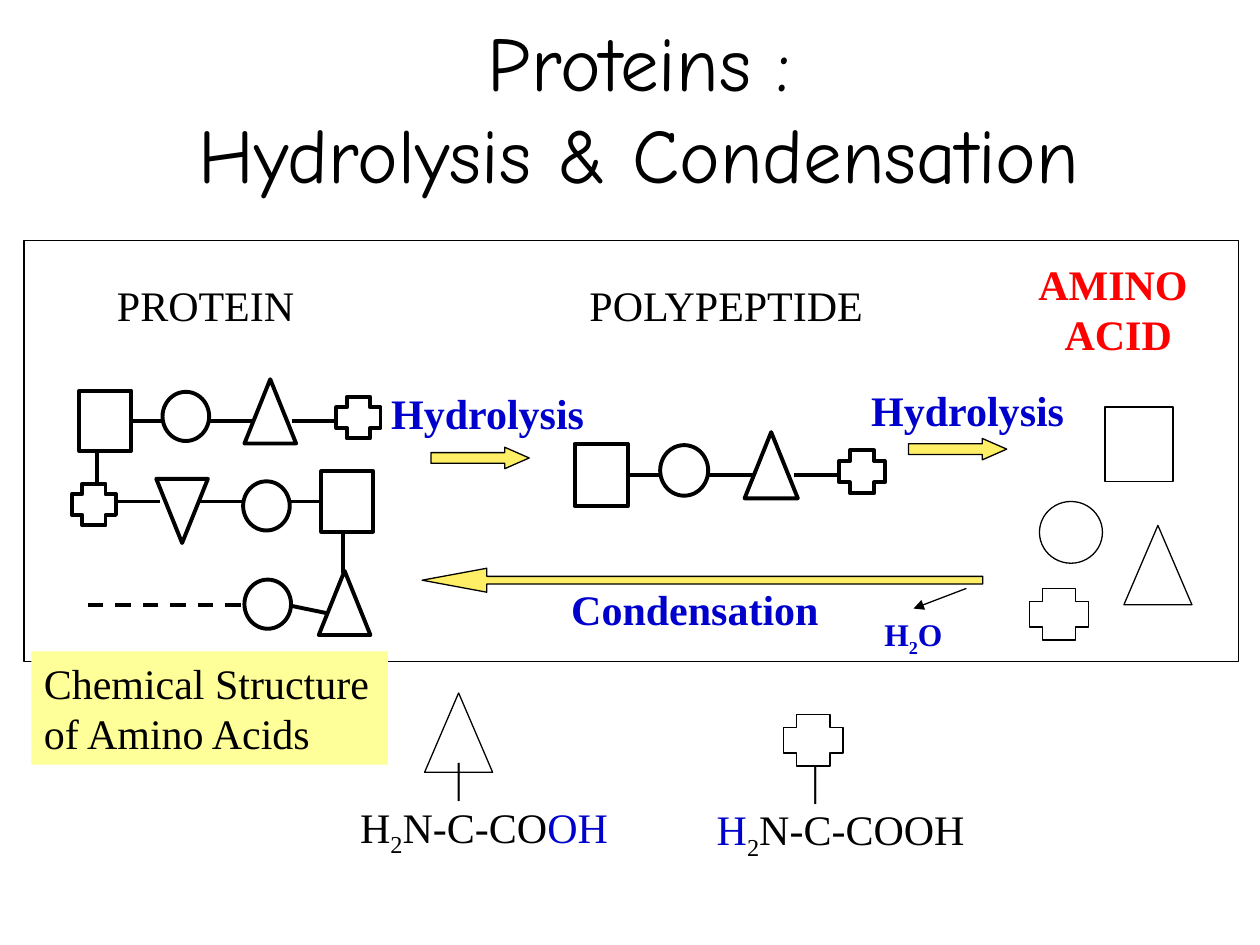
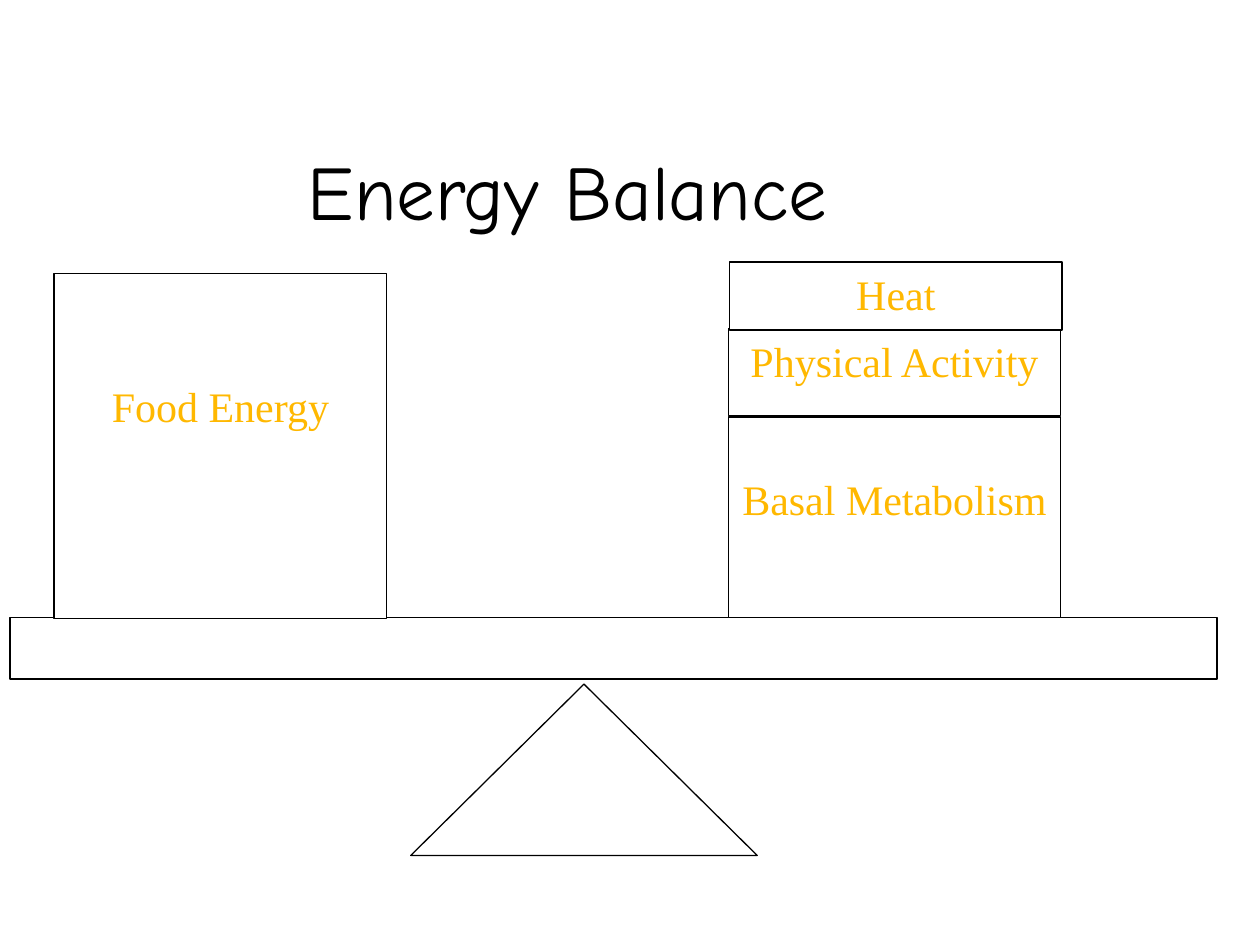
from lxml.etree import SubElement
from pptx import Presentation
from pptx.dml.color import RGBColor
from pptx.enum.dml import MSO_LINE_DASH_STYLE as Dash
from pptx.enum.shapes import MSO_CONNECTOR as Connector, MSO_SHAPE as Preset
from pptx.enum.text import MSO_ANCHOR as Anchor, MSO_AUTO_SIZE as AutoSize, PP_ALIGN as Align
from pptx.oxml.ns import qn
from pptx.util import Emu, Inches, Pt

COLUMNS, ROWS = 100, 75
TITLE_FONT, BODY_FONT = "Comic Neue", "Times New Roman"
BLACK, WHITE, BLUE, RED = "000000", "FFFFFF", "0000CC", "FF0000"
ARROW_YELLOW, LABEL_YELLOW, AMBER = "FFEF66", "FFFF99", "FFB800"
THIN, THICK = 0.75, 2.25


def color(hex_string):
    return RGBColor.from_string(hex_string)


class Deck:
    def __init__(self):
        self.presentation = Presentation()
        self.presentation.slide_width = Inches(10)
        self.presentation.slide_height = Inches(7.5)
        self.slide = None

    def x(self, columns):
        return Emu(round(self.presentation.slide_width * columns / COLUMNS))

    def y(self, rows):
        return Emu(round(self.presentation.slide_height * rows / ROWS))

    def place(self, box):
        left, top, width, height = box
        return self.x(left), self.y(top), self.x(width), self.y(height)

    def new_slide(self, title, box):
        self.slide = self.presentation.slides.add_slide(self.presentation.slide_layouts[5])
        shape = self.slide.shapes.title
        shape.left, shape.top, shape.width, shape.height = self.place(box)
        text_frame = shape.text_frame
        text_frame.text = title
        text_frame.word_wrap = True
        text_frame.auto_size = AutoSize.NONE
        text_frame.vertical_anchor = Anchor.BOTTOM
        paragraph = text_frame.paragraphs[0]
        paragraph.alignment = Align.CENTER
        for run in paragraph.runs:
            self.style(run, 44, BLACK, name=TITLE_FONT)

    def style(self, run, size, hex_string, bold=False, name=BODY_FONT):
        run.font.name, run.font.size, run.font.bold = name, Pt(size), bold
        run.font.color.rgb = color(hex_string)

    def shape(self, preset, box, fill=WHITE, weight=THIN, adjustments=(), rotation=0):
        shape = self.slide.shapes.add_shape(preset, *self.place(box))
        shape.shadow.inherit = False
        shape.rotation = rotation
        for index, value in enumerate(adjustments):
            shape.adjustments[index] = value
        if fill:
            shape.fill.solid()
            shape.fill.fore_color.rgb = color(fill)
        else:
            shape.fill.background()
        if weight:
            shape.line.color.rgb = color(BLACK)
            shape.line.width = Pt(weight)
        else:
            shape.line.fill.background()
        return shape

    def line(self, start, end, weight=THICK, dash=None, arrow=False):
        connector = self.slide.shapes.add_connector(
            Connector.STRAIGHT, self.x(start[0]), self.y(start[1]), self.x(end[0]), self.y(end[1]))
        connector.line.color.rgb = color(BLACK)
        connector.line.width = Pt(weight)
        if dash:
            connector.line.dash_style = dash
        if arrow:
            SubElement(connector.line._get_or_add_ln(), qn("a:tailEnd"), type="triangle")
        SubElement(connector._element.spPr, qn("a:effectLst"))
        return connector

    def label(self, shape, paragraphs, hex_string=BLACK, size=24, bold=False,
              align=Align.LEFT, wrap=True, space_above=0):
        text_frame = shape.text_frame
        text_frame.word_wrap = wrap
        text_frame.vertical_anchor = Anchor.TOP
        text_frame.margin_top = Inches(0.05) + self.y(space_above)
        for index, pieces in enumerate(paragraphs):
            paragraph = text_frame.add_paragraph() if index else text_frame.paragraphs[0]
            paragraph.alignment = align
            if isinstance(pieces, str):
                pieces = [(pieces, hex_string)]
            for text, piece_color in pieces:
                run = paragraph.add_run()
                run.text = text
                self.style(run, size, piece_color, bold)
                if text.isdigit():
                    run.font._element.set("baseline", "-25000")

    def text(self, box, paragraphs, **options):
        text_box = self.slide.shapes.add_textbox(*self.place(box))
        self.label(text_box, paragraphs, **options)
        return text_box

    def chain(self, left, top, scale=1.0, turned=False):
        length, height = 23.9, 5.1

        def bead(preset, column, row, width, tall, rotation=0):
            if turned:
                column, row = length - column - width, height - row - tall
            box = (left + column * scale, top + row * scale, width * scale, tall * scale)
            return self.shape(preset, box, weight=THICK, rotation=rotation)

        def point(column):
            row = height - 3.3 if turned else 3.3
            column = length - column if turned else column
            return left + column * scale, top + row * scale

        square = bead(Preset.RECTANGLE, 0, 0.9, 4.1, 4.8)
        links = [self.line(point(start), point(start + 3.7)) for start in (2.9, 10.1, 16.9)]
        links[0].begin_connect(square, 1 if turned else 3)
        bead(Preset.OVAL, 6.6, 1, 3.7, 3.9)
        bead(Preset.ISOSCELES_TRIANGLE, 13.1, 0, 4.1, 5.1, 180 if turned else 0)
        bead(Preset.CROSS, 20.4, 1.4, 3.5, 3.3)

    def formula(self, left, top, pieces):
        box = self.text((left, top, 22.4, 9), ["|", pieces])
        bond = box.text_frame.paragraphs[0]
        bond._p.get_or_add_pPr().set("marL", str(self.x(7.5)))


def hydrolysis_slide(deck):
    deck.new_slide("Proteins :\vHydrolysis & Condensation", (3.5, 0.6, 94.5, 15.7))

    deck.chain(45.6, 34.3, scale=1.03)
    deck.chain(6.3, 30.1)
    deck.chain(5.7, 38, turned=True)
    deck.line((7.7, 35.8), (7.7, 38.6))
    deck.line((27.2, 42.2), (27.2, 45.5))
    deck.shape(Preset.ISOSCELES_TRIANGLE, (25.3, 45.3, 4.1, 5.1), weight=THICK)
    deck.shape(Preset.OVAL, (19.4, 46, 3.7, 3.9), weight=THICK)
    deck.line((26.1, 48.7), (23.2, 48.1))
    deck.line((19.1, 48), (6.7, 48), dash=Dash.DASH)

    deck.shape(Preset.RECTANGLE, (1.9, 19.1, 96.4, 33.4), fill=None)
    for preset, box in (
        (Preset.ISOSCELES_TRIANGLE, (33.7, 55, 5.4, 6.3)),
        (Preset.ISOSCELES_TRIANGLE, (89.2, 41.7, 5.4, 6.3)),
        (Preset.CROSS, (81.7, 46.7, 4.7, 4.1)),
        (Preset.CROSS, (62.2, 56.7, 4.7, 4.1)),
        (Preset.OVAL, (82.5, 39.8, 5, 4.9)),
        (Preset.RECTANGLE, (87.7, 32.3, 5.4, 5.9)),
    ):
        deck.shape(preset, box)

    for left, top in ((34.2, 35.5), (72.1, 34.8)):
        deck.shape(Preset.RIGHT_ARROW, (left, top, 7.8, 1.7), ARROW_YELLOW, adjustments=(0.5, 1.14))
    deck.shape(Preset.LEFT_ARROW, (33.5, 45.1, 44.5, 1.9), ARROW_YELLOW, adjustments=(0.32, 2.7))
    deck.line((76.7, 46.7), (72.5, 48.3), weight=THIN, arrow=True)

    for label, box in (("Hydrolysis", (30, 30.3, 17.4, 5)),
                       ("Hydrolysis", (68.1, 30, 17.4, 5)),
                       ("Condensation", (44.3, 45.8, 21.7, 5))):
        deck.text(box, [label], hex_string=BLUE, bold=True, align=Align.CENTER, wrap=False)
    for label, left, width in (("PROTEIN", 8.3, 16.1), ("POLYPEPTIDE", 45.8, 24.1)):
        deck.text((left, 21.7, width, 5), [label], wrap=False)
    deck.text((81.4, 20, 14.7, 9), ["AMINO ", "ACID"], hex_string=RED, bold=True,
              align=Align.CENTER, wrap=False)
    deck.text((69.2, 48.3, 6.7, 4), [[("H", BLUE), ("2", BLUE), ("O", BLUE)]],
              size=18, bold=True, wrap=False)

    deck.formula(55.9, 59.3, [("H", BLUE), ("2", BLACK), ("N-C-COOH", BLACK)])
    deck.formula(27.6, 59.1, [("H", BLACK), ("2", BLACK), ("N-C-CO", BLACK), ("OH", BLUE)])
    caption = deck.shape(Preset.RECTANGLE, (2.5, 51.7, 28.3, 9), LABEL_YELLOW, weight=None)
    deck.label(caption, ["Chemical Structure of Amino Acids"])


def energy_slide(deck):
    deck.new_slide("Energy Balance", (7.5, 1.7, 75.1, 17.5))
    deck.shape(Preset.RECTANGLE, (0.8, 49, 95.8, 4.9))
    for label, left, top, height, space_above in (
        ("Food Energy", 4.3, 21.7, 27.4, 8),
        ("Basal Metabolism", 57.8, 33.1, 15.9, 4),
        ("Physical Activity", 57.8, 26.1, 6.9, 0),
        ("Heat", 57.9, 20.8, 5.4, 0),
    ):
        weight_block = deck.shape(Preset.RECTANGLE, (left, top, 26.4, height))
        deck.label(weight_block, [label], hex_string=AMBER, align=Align.CENTER,
                   space_above=space_above)
    deck.shape(Preset.ISOSCELES_TRIANGLE, (32.6, 54.3, 27.5, 13.6))


def main():
    deck = Deck()
    hydrolysis_slide(deck)
    energy_slide(deck)
    deck.presentation.save("out.pptx")


if __name__ == "__main__":
    main()
